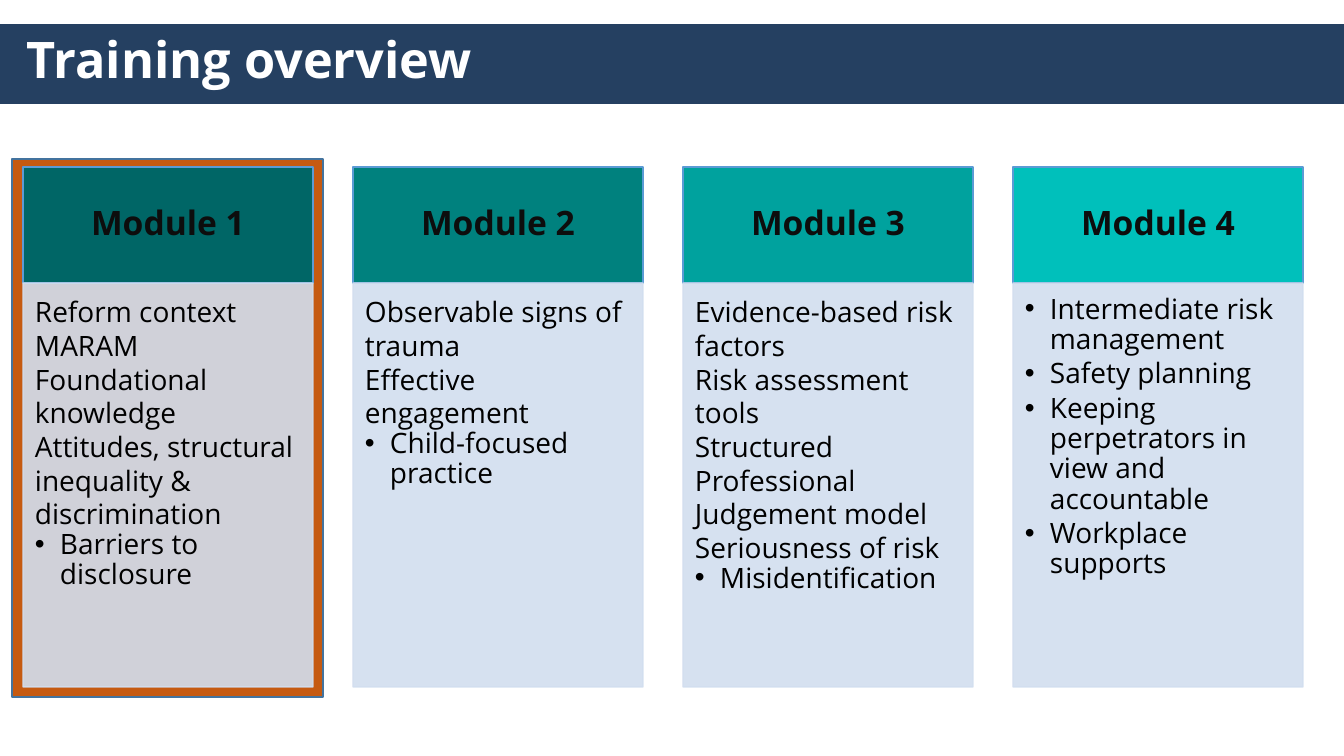
from pptx import Presentation
from pptx.dml.color import RGBColor
from pptx.enum.shapes import MSO_SHAPE as Shape
from pptx.enum.text import MSO_ANCHOR as Anchor, PP_ALIGN as Align
from pptx.oxml.ns import qn
from pptx.util import Emu, Pt
from lxml.etree import SubElement

TITLE = "Training overview"
# Module name, header colour, plain lines, bulleted lines
MODULES = [
    ("Module 1", RGBColor(0x00, 0x66, 0x66),
     ["Reform context", "MARAM", "Foundational knowledge",
      "Attitudes, structural inequality & discrimination"],
     ["Barriers to disclosure"]),
    ("Module 2", RGBColor(0x00, 0x81, 0x7E),
     ["Observable signs of trauma", "Effective engagement"],
     ["Child-focused practice"]),
    ("Module 3", RGBColor(0x00, 0xA2, 0x9E),
     ["Evidence-based risk factors", "Risk assessment tools",
      "Structured Professional Judgement model", "Seriousness of risk"],
     ["Misidentification"]),
    ("Module 4", RGBColor(0x00, 0xC0, 0xBB),
     [],
     ["Intermediate risk management", "Safety planning",
      "Keeping perpetrators in view and accountable", "Workplace supports"]),
]

NAVY = RGBColor(0x25, 0x40, 0x61)
ORANGE = RGBColor(0xC5, 0x5A, 0x11)
FRAME_EDGE = RGBColor(0x43, 0x73, 0x9E)
HEADER_EDGE = RGBColor(0x5B, 0x9B, 0xD5)
PALE_BLUE = RGBColor(0xD2, 0xDE, 0xEF)
NEAR_BLACK = RGBColor(0x0D, 0x0D, 0x0D)
BLACK = RGBColor(0, 0, 0)
WHITE = RGBColor(0xFF, 0xFF, 0xFF)

PX = 914400 / 100.8
SLIDE_W, SLIDE_H = 1344, 756
COLUMN_LEFT, COLUMN_STEP, COLUMN_W = 23, 330, 290
HEADER_TOP, HEADER_H, BODY_H = 167, 116, 404
BULLET_INDENT = 25

TITLE_FONT = dict(name="Open Sans", size=Pt(36), bold=True)
HEADER_FONT = dict(name="Open Sans", size=Pt(24), bold=True)
BODY_FONT = dict(name="Open Sans", size=Pt(20), bold=False)


def px(length):
    return Emu(round(length * PX))


def add_rect(slide, box, fill, edge, opacity=100):
    rect = slide.shapes.add_shape(Shape.RECTANGLE, *map(px, box))
    rect.shadow.inherit = False
    rect.fill.solid()
    rect.fill.fore_color.rgb = fill
    rect.line.color.rgb = edge
    rect.line.width = Pt(1)
    if opacity < 100:
        for colour in rect._element.spPr.iter(qn("a:srgbClr")):
            SubElement(colour, qn("a:alpha"), val=str(opacity * 1000))
    return rect


def set_frame(shape, anchor, margins):
    """Set wrapping, anchor and the left, top, right, bottom margins."""
    frame = shape.text_frame
    frame.word_wrap = True
    frame.vertical_anchor = anchor
    for side, margin in zip(("left", "top", "right", "bottom"), margins):
        setattr(frame, f"margin_{side}", px(margin))
    return frame


def write(paragraph, text, font, colour, align=Align.LEFT, spacing=0.9, after=0):
    paragraph.text = text
    paragraph.alignment = align
    paragraph.line_spacing = spacing
    paragraph.space_after = Pt(after)
    run_font = paragraph.runs[0].font
    for key, value in font.items():
        setattr(run_font, key, value)
    run_font.color.rgb = colour


def add_bullet(paragraph):
    properties = paragraph._p.get_or_add_pPr()
    properties.set("marL", str(px(BULLET_INDENT)))
    properties.set("indent", str(-px(BULLET_INDENT)))
    SubElement(properties, qn("a:buFont"), typeface="Arial")
    SubElement(properties, qn("a:buChar"), char="•")


def add_module(slide, left, name, header_colour, plain, bulleted):
    header = add_rect(slide, (left, HEADER_TOP, COLUMN_W, HEADER_H),
                      header_colour, HEADER_EDGE)
    frame = set_frame(header, Anchor.MIDDLE, (19, 11, 19, 11))
    write(frame.paragraphs[0], name, HEADER_FONT, NEAR_BLACK, Align.CENTER)

    body = add_rect(slide, (left, HEADER_TOP + HEADER_H, COLUMN_W, BODY_H),
                    PALE_BLUE, PALE_BLUE, opacity=90)
    frame = set_frame(body, Anchor.TOP, (12, 12, 16, 17))
    for index, topic in enumerate(plain + bulleted):
        paragraph = frame.add_paragraph() if index else frame.paragraphs[0]
        if index < len(plain):
            write(paragraph, topic, BODY_FONT, BLACK, spacing=1.0)
        else:
            add_bullet(paragraph)
            write(paragraph, topic, BODY_FONT, BLACK, after=3)


def main():
    deck = Presentation()
    deck.slide_width, deck.slide_height = px(SLIDE_W), px(SLIDE_H)
    slide = deck.slides.add_slide(deck.slide_layouts[6])

    add_rect(slide, (12, 159, 311, 538), ORANGE, FRAME_EDGE)
    for column, module in enumerate(MODULES):
        add_module(slide, COLUMN_LEFT + column * COLUMN_STEP, *module)

    banner = add_rect(slide, (0, 25, SLIDE_W, 78), NAVY, NAVY)
    frame = set_frame(banner, Anchor.MIDDLE, (27, 0, 10, 4))
    write(frame.paragraphs[0], TITLE, TITLE_FONT, WHITE)

    deck.save("out.pptx")


if __name__ == "__main__":
    main()
